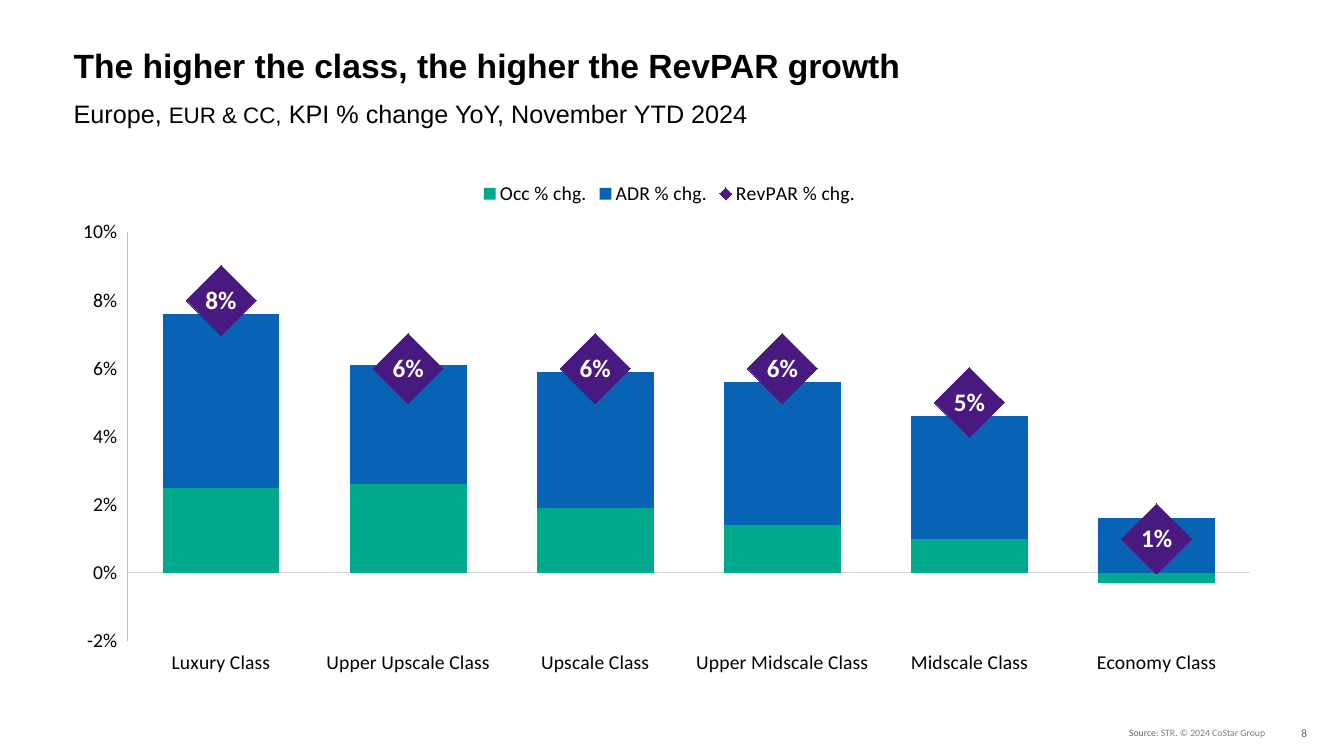
from lxml import etree
from pptx import Presentation
from pptx.chart.data import CategoryChartData
from pptx.dml.color import RGBColor
from pptx.enum.chart import (XL_CHART_TYPE, XL_LABEL_POSITION, XL_LEGEND_POSITION,
                             XL_MARKER_STYLE, XL_TICK_LABEL_POSITION, XL_TICK_MARK)
from pptx.enum.text import MSO_ANCHOR, MSO_AUTO_SIZE, PP_ALIGN
from pptx.oxml import parse_xml
from pptx.oxml.ns import nsdecls, qn
from pptx.util import Inches, Pt

STACKED = XL_CHART_TYPE.COLUMN_STACKED
NO_TICK = XL_TICK_MARK.NONE
LEFT, TOP, MIDDLE = PP_ALIGN.LEFT, MSO_ANCHOR.TOP, MSO_ANCHOR.MIDDLE

PAGE_WIDTH, PAGE_HEIGHT = 13.33, 7.5
MARGIN = 0.63
BLACK, WHITE, GREY = "000000", "FFFFFF", "666666"
PURPLE = "48197F"

CLASSES = ["Luxury Class", "Upper Upscale Class", "Upscale Class",
           "Upper Midscale Class", "Midscale Class", "Economy Class"]
MEASURES = [
    ("Occ % chg.", "00A88C", [0.025, 0.026, 0.019, 0.014, 0.01, -0.003]),
    ("ADR % chg.", "0863B5", [0.051, 0.035, 0.04, 0.042, 0.036, 0.016]),
    ("RevPAR % chg.", PURPLE, [0.08, 0.06, 0.06, 0.06, 0.05, 0.01]),
]
# Plot area as shares of the chart frame
PLOT_SHARES = {"x": 0.052, "y": 0.12, "w": 0.928, "h": 0.794}


def colour(code):
    return RGBColor.from_string(code)


def style_font(font, size, code=BLACK, name="Calibri", bold=False):
    for key, value in {"size": Pt(size), "name": name, "bold": bold}.items():
        setattr(font, key, value)
    font.color.rgb = colour(code)


def paint(shape_format, code):
    shape_format.fill.solid()
    shape_format.fill.fore_color.rgb = colour(code)


def place(shape, left, top, width, height):
    box = {"left": left, "top": top, "width": width, "height": height}
    for key, value in box.items():
        setattr(shape, key, Inches(value))


def write(shape, spans, anchor=TOP, line_spacing=None):
    """Fill a shape with one paragraph; each span is (text, font settings)."""
    frame = shape.text_frame
    settings = {"word_wrap": True, "auto_size": MSO_AUTO_SIZE.NONE, "vertical_anchor": anchor}
    for key, value in settings.items():
        setattr(frame, key, value)
    para = frame.paragraphs[0]
    para.alignment = LEFT
    if line_spacing:
        para.line_spacing = Pt(line_spacing)
        para.space_before = Pt(0)
    for text, font in spans:
        span = para.add_run()
        span.text = text
        style_font(span.font, **font)
    return para


def add_note(page, box, spans, anchor=TOP):
    note = page.shapes.add_textbox(0, 0, 0, 0)
    place(note, *box)
    write(note, spans, anchor)


def remove_bullet(para):
    properties = para._p.get_or_add_pPr()
    properties.set("marL", "0")
    properties.set("indent", "0")
    etree.SubElement(properties, qn("a:buNone"))


def move_last_series_to_line(chart):
    """Turn the last column series into a line series on the same axes."""
    bars = chart.plots[0]._element
    series = bars.findall(qn("c:ser"))[-1]
    axis_ids = "".join(f'<c:axId val="{axis.get("val")}"/>'
                       for axis in bars.findall(qn("c:axId")))
    line = parse_xml(f'<c:lineChart {nsdecls("c")}><c:grouping val="standard"/>'
                     f'<c:varyColors val="0"/><c:marker val="1"/>{axis_ids}</c:lineChart>')
    for invert in series.findall(qn("c:invertIfNegative")):
        series.remove(invert)
    line.insert(2, series)
    bars.addnext(line)


def set_plot_area(chart):
    area = chart.plots[0]._element.getparent()
    for layout in area.findall(qn("c:layout")):
        area.remove(layout)
    shares = "".join(f'<c:{key} val="{value}"/>' for key, value in PLOT_SHARES.items())
    area.insert(0, parse_xml(
        f'<c:layout {nsdecls("c")}><c:manualLayout><c:layoutTarget val="inner"/>'
        f'<c:xMode val="edge"/><c:yMode val="edge"/>{shares}</c:manualLayout></c:layout>'))


def style_axis(axis, line_colour):
    settings = {"has_major_gridlines": False, "major_tick_mark": NO_TICK,
                "minor_tick_mark": NO_TICK, "tick_label_position": XL_TICK_LABEL_POSITION.LOW}
    for key, value in settings.items():
        setattr(axis, key, value)
    style_font(axis.tick_labels.font, 14)
    axis.format.line.color.rgb = colour(line_colour)
    axis.format.line.width = Pt(0.75)


def style_diamonds(series):
    series.smooth = False
    series.format.line.fill.background()
    marker = series.marker
    marker.style = XL_MARKER_STYLE.DIAMOND
    marker.size = 50
    paint(marker.format, PURPLE)
    marker.format.line.color.rgb = colour(PURPLE)
    labels = series.data_labels
    settings = {"show_value": True, "position": XL_LABEL_POSITION.CENTER,
                "number_format": "0%", "number_format_is_linked": False}
    for key, value in settings.items():
        setattr(labels, key, value)
    style_font(labels.font, 18, WHITE, bold=True)


def add_growth_chart(page):
    data = CategoryChartData(number_format="0.0%")
    data.categories = CLASSES
    for name, _, values in MEASURES:
        data.add_series(name, values)
    box = [Inches(length) for length in (0.64, 1.69, 12, 5.11)]
    chart = page.shapes.add_chart(STACKED, *box, data).chart
    chart.has_title = False
    style_font(chart.font, 14)

    # Columns and diamonds
    move_last_series_to_line(chart)
    set_plot_area(chart)
    columns, diamonds = chart.plots
    for key, value in {"gap_width": 60, "overlap": 100, "vary_by_categories": False}.items():
        setattr(columns, key, value)
    for series, (_, code, _) in zip(columns.series, MEASURES):
        paint(series.format, code)
        series.invert_if_negative = False
    style_diamonds(diamonds.series[0])

    # Axes
    style_axis(chart.category_axis, "D9D9D9")
    scale = chart.value_axis
    style_axis(scale, "BFBFBF")
    limits = {"minimum_scale": -0.02, "maximum_scale": 0.1, "major_unit": 0.02}
    for key, value in limits.items():
        setattr(scale, key, value)
    scale.tick_labels.number_format = "0%"
    scale.tick_labels.number_format_is_linked = False

    # Legend
    chart.has_legend = True
    chart.legend.position = XL_LEGEND_POSITION.TOP
    chart.legend.include_in_layout = False
    style_font(chart.legend.font, 14)


def add_headings(page):
    title, subtitle = page.placeholders[0], page.placeholders[1]
    place(title, MARGIN, 0.47, 12.27, 0.38)
    write(title, [("The higher the class, the higher the RevPAR growth",
                   {"size": 24, "name": "Arial", "bold": True})], MIDDLE, 26.7)
    place(subtitle, MARGIN, 0.85, 12.07, 0.34)
    large, small = ({"size": size, "name": "Arial"} for size in (18, 16))
    para = write(subtitle, [("Europe, ", large), ("EUR & CC,", small),
                            (" KPI % change YoY, November YTD 2024", large)], TOP, 26.7)
    remove_bullet(para)


def main():
    deck = Presentation()
    deck.slide_width, deck.slide_height = Inches(PAGE_WIDTH), Inches(PAGE_HEIGHT)
    page = deck.slides.add_slide(deck.slide_layouts[1])

    # Footer
    add_note(page, (11.1, 7.16, 1.63, 0.22),
             [("Source", {"size": 7, "code": GREY}),
              (": STR. © 2024 CoStar Group", {"size": 7, "code": "808080"})])
    add_note(page, (12.81, 7.17, 0.43, 0.2), [("8", {"size": 8, "code": GREY})], MIDDLE)

    add_growth_chart(page)
    add_headings(page)
    deck.save("out.pptx")


if __name__ == "__main__":
    main()
